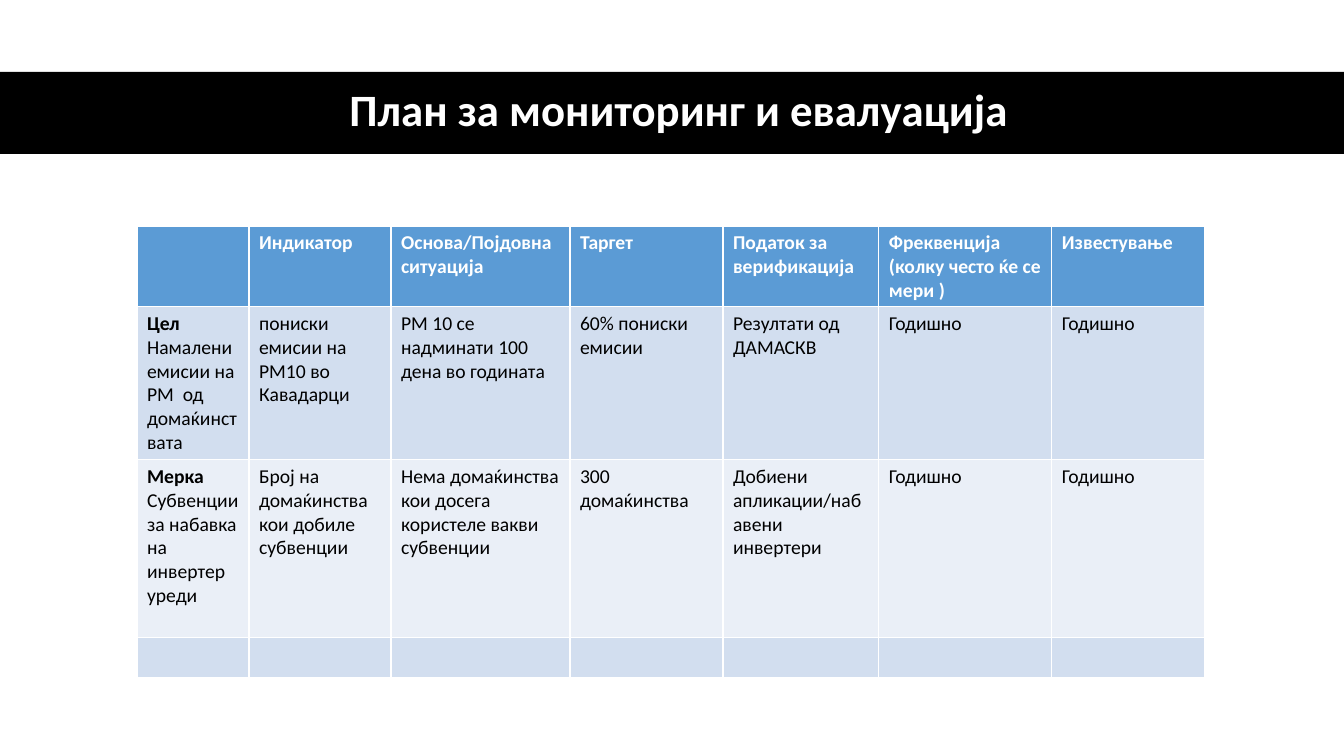
from dataclasses import dataclass

from pptx import Presentation
from pptx import util as u
from pptx.dml.color import RGBColor
from pptx.enum import shapes, text

EMU_PER_PX = 12192000 / 1344


@dataclass(frozen=True)
class Theme:
    font: str = "Calibri"
    title_size: int = 32
    table_size: int = 14
    black: str = "000000"
    white: str = "FFFFFF"
    header: str = "5B9BD5"
    bands: tuple[str, str] = ("D2DEEF", "EAEFF7")


@dataclass(frozen=True)
class Box:
    left: int
    top: int
    width: int
    height: int

    def emu(self) -> tuple[u.Emu, ...]:
        return tuple(px(n) for n in (self.left, self.top, self.width, self.height))


@dataclass(frozen=True)
class Row:
    height: int
    cells: tuple[str, ...]


THEME = Theme()
TITLE = "План за мониторинг и евалуација"
BAND = Box(0, 72, 1344, 82)
TITLE_BOX = Box(61, 71, 1236, 82)
TABLE_LEFT, TABLE_TOP = 137, 226
COLUMN_WIDTHS = (112, 142, 179, 153, 156, 173, 153)
ROWS = (
    Row(80, ("", "Индикатор", "Основа/Појдовна ситуација", "Таргет",
             "Податок за верификација",
             "Фреквенција\n(колку често ќе се мери )", "Известување")),
    Row(153, ("Цел\nНамалени емисии на РМ  од домаќинствата",
              "пониски емисии на РМ10 во Кавадарци",
              "РМ 10 се надминати 100 дена во годината",
              "60% пониски емисии", "Резултати од ДАМАСКВ",
              "Годишно", "Годишно")),
    Row(178, ("Мерка\nСубвенции за набавка на инвертер уреди",
              "Број на домаќинства кои добиле субвенции",
              "Нема домаќинства кои досега користеле вакви субвенции",
              "300 домаќинства", "Добиени апликации/набавени инвертери",
              "Годишно", "Годишно")),
    Row(40, ("",) * len(COLUMN_WIDTHS)),
)


def px(length: int) -> u.Emu:
    return u.Emu(round(length * EMU_PER_PX))


def style(paragraph, size: int, color: str, bold: bool) -> None:
    font = paragraph.font
    font.name = THEME.font
    font.size = u.Pt(size)
    font.bold = bold
    font.color.rgb = RGBColor.from_string(color)


def fill(target, color: str) -> None:
    target.fill.solid()
    target.fill.fore_color.rgb = RGBColor.from_string(color)


def draw_title(slide) -> None:
    band = slide.shapes.add_shape(shapes.MSO_SHAPE.RECTANGLE, *BAND.emu())
    band.shadow.inherit = False
    fill(band, THEME.black)
    band.line.fill.background()

    frame = slide.shapes.add_textbox(*TITLE_BOX.emu()).text_frame
    frame.word_wrap = True
    frame.vertical_anchor = text.MSO_ANCHOR.MIDDLE
    paragraph = frame.paragraphs[0]
    paragraph.text = TITLE
    paragraph.alignment = text.PP_ALIGN.CENTER
    paragraph.line_spacing = 0.9
    style(paragraph, THEME.title_size, THEME.white, True)


def draw_table(slide) -> None:
    box = Box(TABLE_LEFT, TABLE_TOP, sum(COLUMN_WIDTHS), sum(row.height for row in ROWS))
    table = slide.shapes.add_table(len(ROWS), len(COLUMN_WIDTHS), *box.emu()).table
    for column, width in zip(table.columns, COLUMN_WIDTHS):
        column.width = px(width)
    for row_index, row in enumerate(ROWS):
        table.rows[row_index].height = px(row.height)
        is_header = row_index == 0
        background = THEME.header if is_header else THEME.bands[(row_index - 1) % 2]
        color = THEME.white if is_header else THEME.black
        for column_index, content in enumerate(row.cells):
            cell = table.cell(row_index, column_index)
            fill(cell, background)
            cell.text = content
            for line_index, paragraph in enumerate(cell.text_frame.paragraphs):
                is_label = column_index == 0 and line_index == 0
                style(paragraph, THEME.table_size, color, is_header or is_label)


def main() -> None:
    presentation = Presentation()
    presentation.slide_width = px(1344)
    presentation.slide_height = px(756)
    slide = presentation.slides.add_slide(presentation.slide_layouts[6])
    draw_title(slide)
    draw_table(slide)
    presentation.save("out.pptx")


if __name__ == "__main__":
    main()
